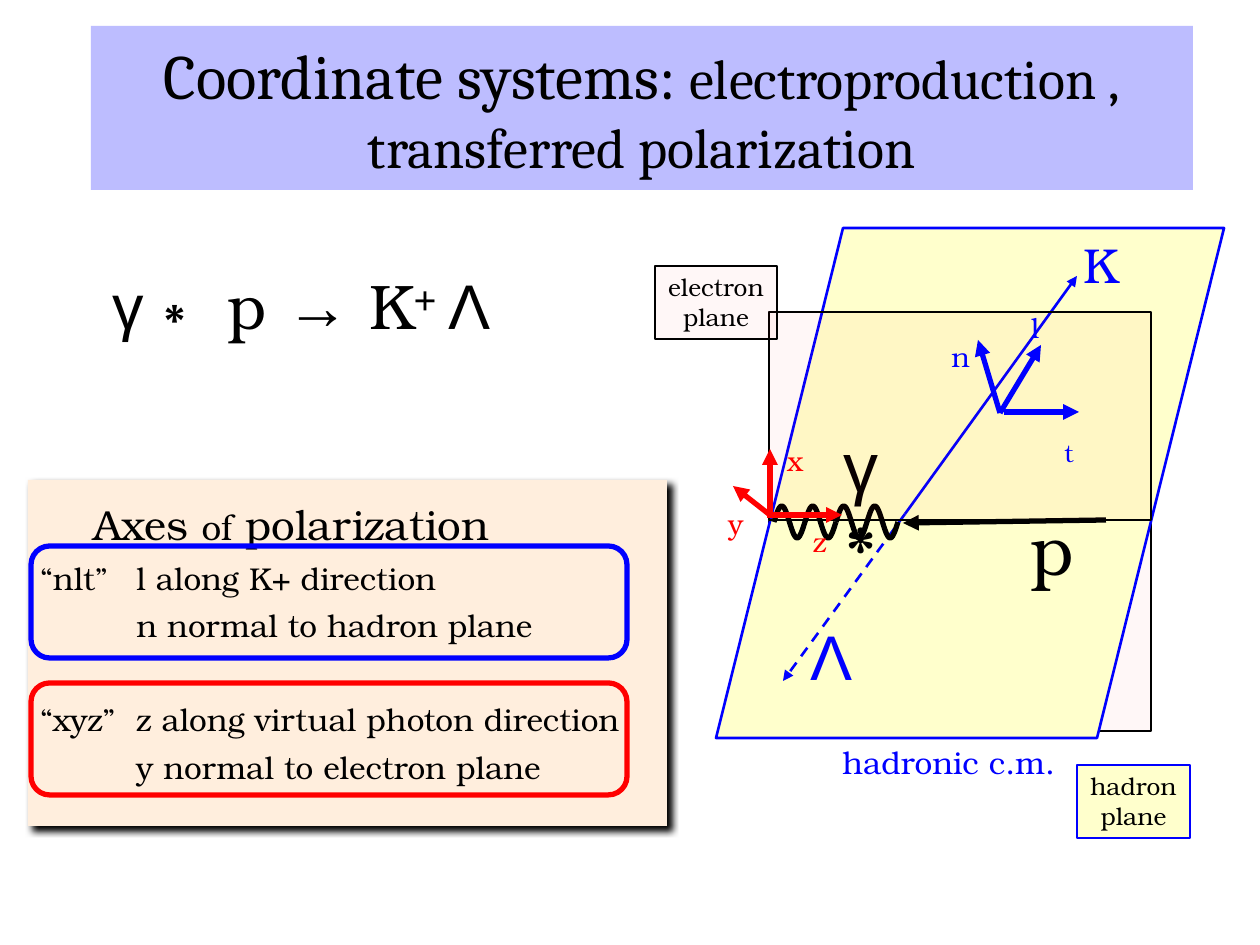
import math

import pptx
import pptx.dml.color
import pptx.enum.dml
import pptx.enum.shapes
import pptx.enum.text
import pptx.oxml.ns
import pptx.util
from lxml import etree

PX = 914400 / 126  # EMU per px
SERIF = "TeX Gyre Bonum"
BLACK, BLUE, RED = "000000", "0000FF", "FF0000"
YELLOW = "FFFFCC"
SHAPE = pptx.enum.shapes.MSO_SHAPE
ALIGN = pptx.enum.text.PP_ALIGN
ANCHOR = pptx.enum.text.MSO_ANCHOR


def px(n):
    return pptx.util.Emu(round(n * PX))


def box(*lengths):
    return [px(n) for n in lengths]


def rgb(value):
    return pptx.dml.color.RGBColor.from_string(value)


def sub(parent, tag, **attrs):
    el = etree.SubElement(parent, pptx.oxml.ns.qn(tag))
    for name, value in attrs.items():
        el.set(name, str(value))
    return el


def add_text(p, text, size=16, font=SERIF, color=BLACK, baseline=None):
    r = p.add_run()
    r.text = text
    r.font.size = pptx.util.Pt(size)
    r.font.name = font
    r.font.color.rgb = rgb(color)
    if baseline:
        r.font._element.set("baseline", str(baseline))


def paragraph(tf, first=False, align=ALIGN.LEFT, margin=0, indent=0):
    p = tf.paragraphs[0] if first else tf.add_paragraph()
    p.alignment = align
    pPr = p._p.get_or_add_pPr()
    pPr.set("marL", str(px(margin)))
    pPr.set("indent", str(px(indent)))
    return p


def add_label(shapes, at, text, wrap=False, align=ALIGN.CENTER, **fmt):
    tf = shapes.add_textbox(*box(*at)).text_frame
    tf.word_wrap = wrap
    add_text(paragraph(tf, True, align), text, **fmt)
    return tf


def add_box(shapes, kind, at, fill=None, alpha=None, line=None, width=1.5):
    sp = shapes.add_shape(kind, *box(*at))
    sp.shadow.inherit = False
    if fill:
        sp.fill.solid()
        sp.fill.fore_color.rgb = rgb(fill)
        if alpha:
            color = sp._element.spPr.find(".//" + pptx.oxml.ns.qn("a:srgbClr"))
            sub(color, "a:alpha", val=alpha * 1000)
    else:
        sp.fill.background()
    if line:
        sp.line.color.rgb = rgb(line)
        sp.line.width = pptx.util.Pt(width)
    else:
        sp.line.fill.background()
    return sp


def add_plane_label(shapes, at, name, fill, alpha, line):
    sp = add_box(shapes, SHAPE.RECTANGLE, at, fill, alpha, line, 1)
    tf = sp.text_frame
    tf.word_wrap = False
    tf.vertical_anchor = ANCHOR.TOP
    for i, word in enumerate((name, "plane")):
        add_text(paragraph(tf, i == 0, ALIGN.CENTER), word, size=14)


def add_arrow(shapes, start, end, color, width=3, dashed=False):
    c = shapes.add_connector(pptx.enum.shapes.MSO_CONNECTOR.STRAIGHT,
                             *box(*start, *end))
    c.line.color.rgb = rgb(color)
    c.line.width = pptx.util.Pt(width)
    if dashed:
        c.line.dash_style = pptx.enum.dml.MSO_LINE.DASH
    sub(c.line._get_or_add_ln(), "a:tailEnd", type="triangle")
    sub(c._element.spPr, "a:effectLst")


def add_wave(shapes, left, middle, width=62, height=16, periods=2, steps=48):
    points = [(px(left + width * i / steps),
               px(middle - height * math.sin(2 * math.pi * periods * i / steps)))
              for i in range(steps + 1)]
    fb = shapes.build_freeform(*points[0])
    fb.add_line_segments(points[1:], close=False)
    sp = fb.convert_to_shape()
    sp.shadow.inherit = False
    sp.fill.background()
    sp.line.color.rgb = rgb(BLACK)
    sp.line.width = pptx.util.Pt(3)


def add_title(s):
    sp = s.shapes.title
    sp.left, sp.top, sp.width, sp.height = box(91, 26, 1102, 164)
    sp.fill.solid()
    sp.fill.fore_color.rgb = rgb("BDBDFF")
    tf = sp.text_frame
    tf.auto_size = pptx.enum.text.MSO_AUTO_SIZE.NONE
    tf.vertical_anchor = ANCHOR.MIDDLE
    p = paragraph(tf, True, ALIGN.CENTER)
    add_text(p, "Coordinate systems: ", size=36, font="Cambria")
    add_text(p, "electroproduction ,", size=32, font="Cambria")
    p.add_line_break()
    add_text(p, "transferred polarization", size=32, font="Cambria")


def add_reaction(shapes):
    tf = shapes.add_textbox(*box(31, 260, 563, 126)).text_frame
    tf.word_wrap = True
    p = paragraph(tf, True, margin=69)
    for text, font, baseline in (("γ∗", "Arial", None), (" p ", SERIF, None),
                                 ("→", "Arial", None), (" K", SERIF, None),
                                 ("+ ", SERIF, 30000), ("Λ", "Arial", None)):
        add_text(p, text, size=36, font=font, baseline=baseline)


def add_axes_panel(shapes):
    sp = add_box(shapes, SHAPE.RECTANGLE, (28, 480, 639, 346), "FFEEDD")
    effects = sp._element.spPr.find(pptx.oxml.ns.qn("a:effectLst"))
    shadow = sub(effects, "a:outerShdw", blurRad=50800, dist=50800,
                 dir=2700000, algn="tl", rotWithShape=0)
    sub(shadow, "a:srgbClr", val=BLACK)
    tf = sp.text_frame
    tf.word_wrap = True
    tf.vertical_anchor = ANCHOR.TOP
    p = paragraph(tf, True, margin=53)
    for text, size in (("Axes ", 24), ("of", 20), (" polarization", 24)):
        add_text(p, text, size=size)
    # Each name hangs to the left of its two definitions
    for text, hang, before in (("“nlt”\tl along K+ direction", -96, 0),
                               ("n normal to hadron plane", 0, 0),
                               ("“xyz”\tz along virtual photon direction", -96, 27),
                               ("y normal to electron plane", 0, 0)):
        p = paragraph(tf, margin=96, indent=hang)
        p.space_before = pptx.util.Pt(before)
        add_text(p, text, size=18)
    for p in tf.paragraphs:
        p.line_spacing = 1.25


def main():
    prs = pptx.Presentation()
    prs.slide_width, prs.slide_height = box(1260, 945)
    s = prs.slides.add_slide(prs.slide_layouts[5])
    shapes = s.shapes
    add_title(s)

    # Lower electron plane and hadron plane
    add_box(shapes, SHAPE.RECTANGLE, (769, 521, 382, 210), RED, 3, BLACK)
    add_box(shapes, SHAPE.PARALLELOGRAM, (716, 228, 508, 510), YELLOW, line=BLUE)

    # Reaction and definitions of the axes
    add_axes_panel(shapes)
    add_reaction(shapes)
    for top, color in ((683, RED), (546, BLUE)):
        add_box(shapes, SHAPE.ROUNDED_RECTANGLE, (31, top, 596, 112),
                line=color, width=3)

    # Particles
    add_arrow(shapes, (1106, 520), (903, 523), BLACK)
    add_label(shapes, (1018, 499, 69, 97), "p", size=40)
    add_arrow(shapes, (905, 514), (1077, 276), BLUE, 1.5)
    add_arrow(shapes, (905, 514), (783, 681), BLUE, 1.5, dashed=True)
    add_label(shapes, (797, 611, 69, 88), "Λ", size=36, font="Arial", color=BLUE)
    add_label(shapes, (1071, 228, 60, 72), "K", size=28, color=BLUE)
    add_label(shapes, (830, 737, 238, 50), "hadronic c.m.", align=ALIGN.LEFT,
              size=18, color=BLUE)

    # Virtual photon
    photon = shapes.add_group_shape().shapes
    tf = add_label(photon, (818, 416, 85, 97), "γ", wrap=True, size=40, font="Arial")
    add_text(tf.paragraphs[0], "*", size=40)
    for left in (774, 836):
        add_wave(photon, left, 522)

    # Upper electron plane
    add_box(shapes, SHAPE.RECTANGLE, (769, 312, 382, 208), RED, 3, BLACK)

    # xyz axes
    xyz = shapes.add_group_shape().shapes
    for start, end in (((770, 518), (770, 449)), ((767, 515), (842, 515)),
                       ((770, 515), (733, 486))):
        add_arrow(xyz, start, end, RED)
    for name, left, top in (("z", 800, 518), ("y", 716, 500), ("x", 775, 437)):
        add_label(xyz, (left, top, 40, 47), name, color=RED)
    add_plane_label(xyz, (655, 266, 122, 73), "electron", RED, 3, BLACK)

    # nlt axes
    nlt = shapes.add_group_shape().shapes
    for start, end in (((1000, 413), (1041, 345)), ((1004, 412), (1079, 412)),
                       ((1000, 413), (978, 340))):
        add_arrow(nlt, start, end, BLUE)
    for name, left, top, size in (("n", 939, 333, 16), ("l", 1015, 304, 16),
                                  ("t", 1049, 432, 14)):
        add_label(nlt, (left, top, 40, 47), name, size=size, color=BLUE)
    add_plane_label(nlt, (1077, 765, 113, 73), "hadron", YELLOW, None, BLUE)

    prs.save("out.pptx")


if __name__ == "__main__":
    main()
